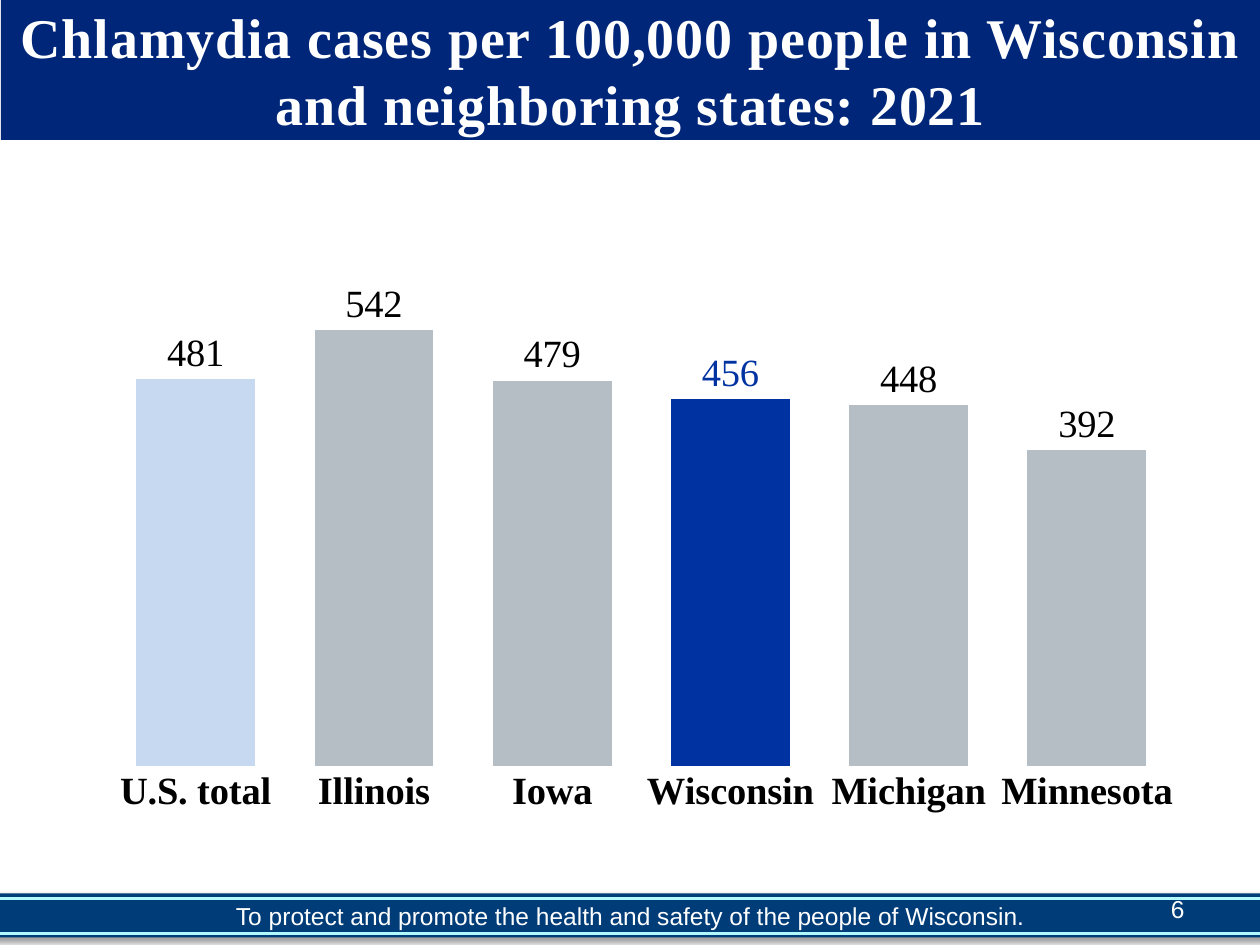
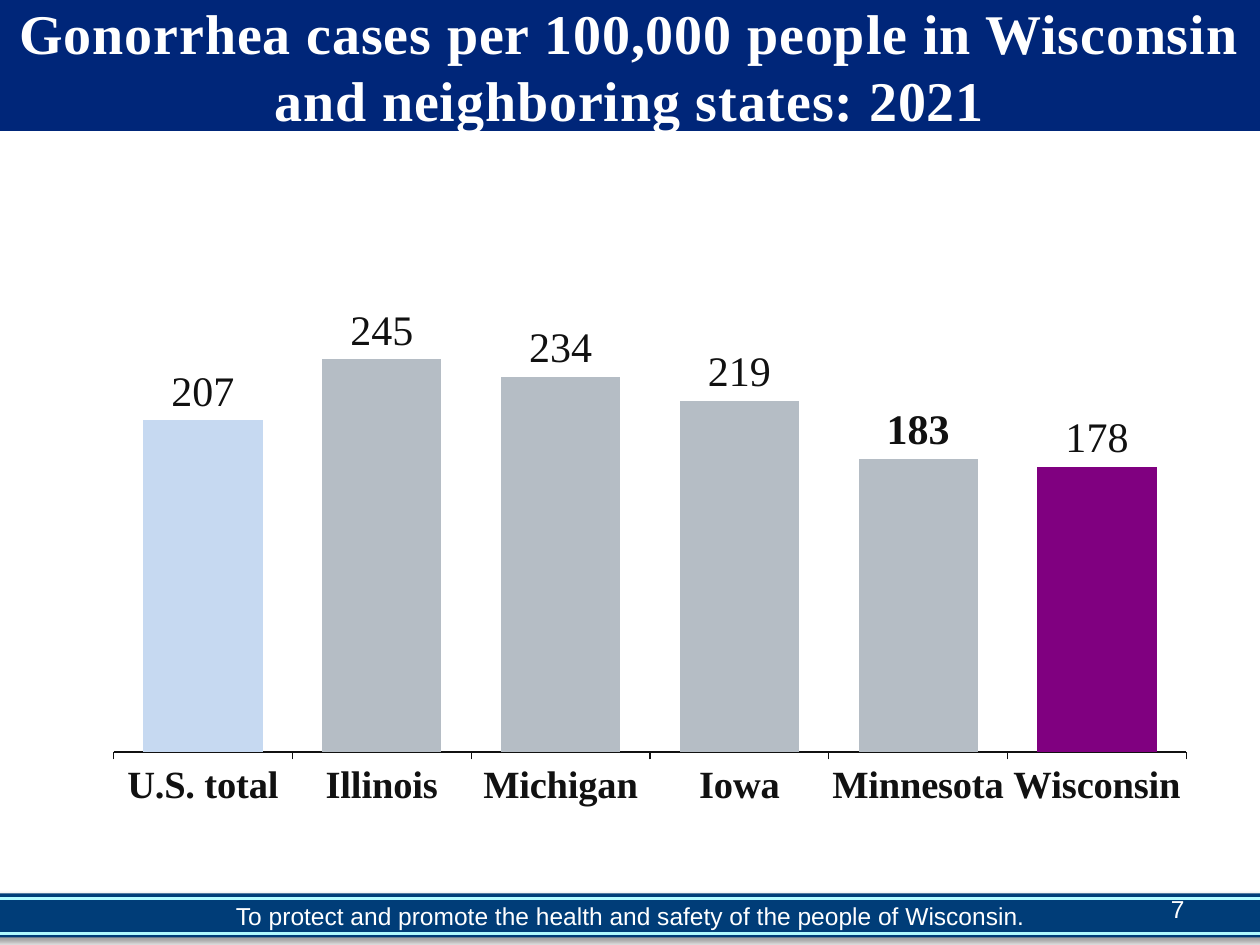
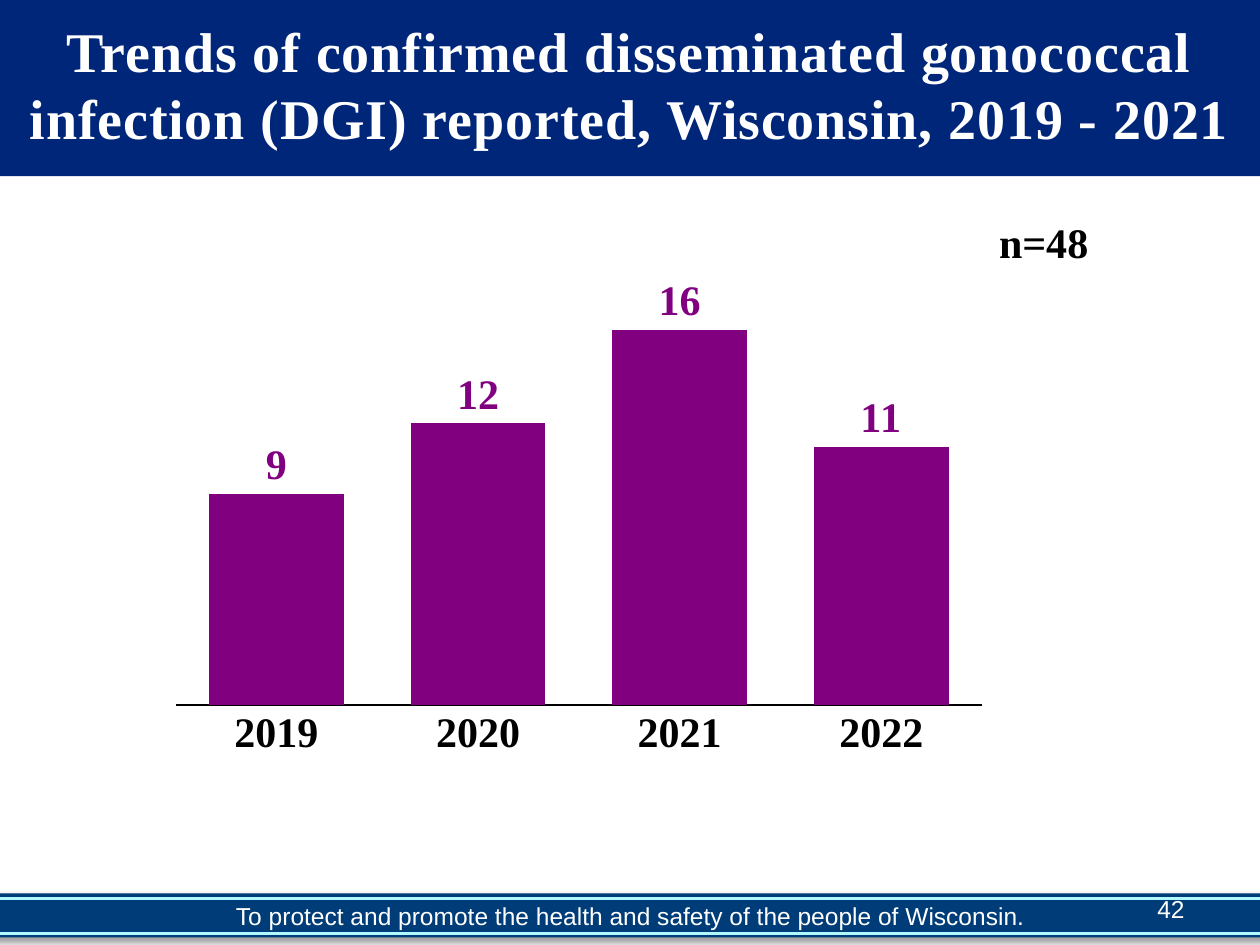
from pptx import Presentation
from pptx.chart.data import CategoryChartData
from pptx.dml.color import RGBColor
from pptx.enum.chart import XL_CHART_TYPE as CT, XL_LABEL_POSITION as LP, XL_TICK_LABEL_POSITION as TLP, XL_TICK_MARK as TM
from pptx.enum.shapes import MSO_CONNECTOR as CONN, MSO_SHAPE as SHAPE
from pptx.enum.text import MSO_ANCHOR as ANCHOR, PP_ALIGN as ALIGN
from pptx.oxml import parse_xml
from pptx.oxml.ns import nsdecls, qn
from pptx.util import Cm, Pt
from lxml import etree

COLORS = {
    "title": "002679", "footer": "003D78", "rule": "B0FAFF",
    "white": "FFFFFF", "black": "000000", "ink": "111111",
    "state": "B5BDC5", "nation": "C6D9F1",
    "chlamydia": "0033A1", "gonorrhea": "800080",
}
SERIF, SANS = "Times New Roman", "Arial"
MOTTO = "To protect and promote the health and safety of the people of Wisconsin."
WIDTH, HEIGHT = 25.4, 19.05


def rgb(name):
    return RGBColor.from_string(COLORS[name])


def set_font(font, name, size, color, bold=False):
    font.name, font.size, font.bold = name, Pt(size), bold
    font.color.rgb = rgb(color)


def paint(fmt, color):
    fmt.fill.solid()
    fmt.fill.fore_color.rgb = rgb(color)


def add_band(slide, box, color):
    sp = slide.shapes.add_shape(SHAPE.RECTANGLE, *map(Cm, box))
    sp.shadow.inherit = False
    paint(sp, color)
    sp.line.fill.background()
    return sp


def write(sp, text, font, align=ALIGN.LEFT, anchor=ANCHOR.MIDDLE):
    """Put one paragraph into a shape; font is (name, size, color, bold)."""
    tf = sp.text_frame
    tf.word_wrap, tf.vertical_anchor = True, anchor
    p = tf.paragraphs[0]
    p.text, p.alignment = text, align
    set_font(p.font, *font)
    return p


def add_text(slide, box, text, font, **layout):
    write(slide.shapes.add_textbox(*map(Cm, box)), text, font, **layout)


def add_rule(slide, y):
    line = slide.shapes.add_connector(CONN.STRAIGHT, Cm(-0.25), Cm(y), Cm(WIDTH + 0.25), Cm(y))
    line.line.color.rgb, line.line.width = rgb("rule"), Pt(1.5)
    etree.SubElement(line._element.spPr, qn("a:effectLst"))


def add_shadow(sp):
    effects = sp._element.spPr.find(qn("a:effectLst"))
    effects.append(parse_xml(
        f'<a:outerShdw {nsdecls("a")} blurRad="{Pt(4)}" dist="{Pt(3)}" dir="2700000">'
        f'<a:srgbClr val="{COLORS["black"]}"><a:alpha val="40000"/></a:srgbClr></a:outerShdw>'))


def add_title(slide, box, text):
    sp = add_band(slide, box, "title")
    p = write(sp, text, (SERIF, 32, "white", True), align=ALIGN.CENTER)
    p.runs[0]._r.get_or_add_rPr().set("spc", "50")


def add_footer(slide, number):
    add_shadow(add_band(slide, (-0.25, 18.01, WIDTH + 0.5, 0.89), "footer"))
    font = (SANS, 14, "white")
    add_text(slide, (-0.2, 18.21, 25.83, 0.51), MOTTO, font, align=ALIGN.CENTER)
    for y in (18.11, 18.82):
        add_rule(slide, y)
    add_text(slide, (18.21, 17.81, 5.92, 1.02), str(number), font, align=ALIGN.RIGHT)


def place_plot(chart, box, plot):
    """Fix the inner plot area; both boxes are in cm on the slide."""
    left, top, width, height = box
    x, y, w, h = plot
    shares = {"x": (x - left) / width, "y": (y - top) / height, "w": w / width, "h": h / height}
    modes = '<c:layoutTarget val="inner"/><c:xMode val="edge"/><c:yMode val="edge"/>'
    values = "".join(f'<c:{key} val="{share:.4f}"/>' for key, share in shares.items())
    area = chart._chartSpace.chart.plotArea
    for old in area.findall(qn("c:layout")):
        area.remove(old)
    area.insert(0, parse_xml(
        f'<c:layout {nsdecls("c")}><c:manualLayout>{modes}{values}</c:manualLayout></c:layout>'))


def add_columns(slide, box, plot, data, top, bar, label, axis, line, tick=TM.NONE, overlap=-30):
    """Draw a column chart; label and axis are fonts, line is (color, width)."""
    cd = CategoryChartData(number_format="0")
    cd.categories = list(data)
    cd.add_series("Series 1", list(data.values()))
    chart = slide.shapes.add_chart(CT.COLUMN_CLUSTERED, *map(Cm, box), cd).chart
    chart.has_legend = chart.has_title = False
    set_font(chart.font, *axis)
    place_plot(chart, box, plot)

    values = chart.value_axis
    values.minimum_scale, values.maximum_scale = 0, top
    values.has_major_gridlines = values.visible = False
    cats = chart.category_axis
    cats.major_tick_mark, cats.minor_tick_mark = tick, TM.NONE
    cats.tick_label_position = TLP.NEXT_TO_AXIS
    set_font(cats.tick_labels.font, *axis)
    cats.format.line.color.rgb, cats.format.line.width = rgb(line[0]), Pt(line[1])

    columns = chart.plots[0]
    columns.gap_width, columns.overlap, columns.vary_by_categories = 50, overlap, False
    series = columns.series[0]
    series.invert_if_negative = False
    paint(series.format, bar)
    labels = series.data_labels
    labels.show_value, labels.position = True, LP.OUTSIDE_END
    set_font(labels.font, *label)
    return series, list(data)


def highlight(series, cats, colors):
    for cat, color in colors.items():
        paint(series.points[cats.index(cat)].format, color)


def restyle_label(series, cats, cat, font):
    label = series.points[cats.index(cat)].data_label
    set_font(label.font, *font)
    label.position = LP.OUTSIDE_END


def new_slide(prs, title_box, title, number):
    slide = prs.slides.add_slide(prs.slide_layouts[6])
    add_footer(slide, number)
    add_title(slide, title_box, title)
    return slide


def add_chlamydia_slide(prs):
    slide = new_slide(prs, (0.02, 0, WIDTH, 2.82),
                      "Chlamydia cases per 100,000 people in Wisconsin and neighboring states: 2021", 6)
    rates = {"U.S. total": 481, "Illinois": 542, "Iowa": 479,
             "Wisconsin": 456, "Michigan": 448, "Minnesota": 392}
    chart = add_columns(slide, (1.07, 4.45, 23.06, 13.36), (2.15, 5.71, 21.56, 9.73), rates, 600,
                        "state", label=(SERIF, 22, "black"), axis=(SERIF, 22, "black", True),
                        line=("white", 0.75))
    highlight(*chart, {"U.S. total": "nation", "Wisconsin": "chlamydia"})
    restyle_label(*chart, "Wisconsin", (SERIF, 22, "chlamydia"))


def add_gonorrhea_slide(prs):
    slide = new_slide(prs, (0, 0, WIDTH, 2.64),
                      "Gonorrhea cases per 100,000 people in Wisconsin and neighboring states: 2021", 7)
    rates = {"U.S. total": 207, "Illinois": 245, "Michigan": 234,
             "Iowa": 219, "Minnesota": 183, "Wisconsin": 178}
    chart = add_columns(slide, (0, 4.78, 24.33, 12.57), (2.29, 5.47, 21.63, 9.69), rates, 300,
                        "state", label=(SERIF, 24, "ink"), axis=(SERIF, 22, "ink", True),
                        line=("ink", 0.75), tick=TM.OUTSIDE)
    highlight(*chart, {"U.S. total": "nation", "Wisconsin": "gonorrhea"})
    restyle_label(*chart, "Minnesota", (SERIF, 24, "ink", True))


def add_dgi_slide(prs):
    slide = new_slide(prs, (0, -0.18, WIDTH, 3.73),
                      "Trends of confirmed disseminated gonococcal infection (DGI) reported, "
                      "Wisconsin, 2019 - 2021", 42)
    cases = {"2019": 9, "2020": 12, "2021": 16, "2022": 11}
    add_columns(slide, (2.97, 4.45, 17.35, 12.07), (3.54, 5.7, 16.26, 8.51), cases, 18,
                "gonorrhea", label=(SERIF, 24, "gonorrhea", True), axis=(SERIF, 24, "black", True),
                line=("black", 1), overlap=-27)
    add_text(slide, (19.89, 4.24, 3.61, 1.27), f"n={sum(cases.values())}",
             (SERIF, 24, "black", True), anchor=ANCHOR.TOP)


def main():
    prs = Presentation()
    prs.slide_width, prs.slide_height = Cm(WIDTH), Cm(HEIGHT)
    add_chlamydia_slide(prs)
    add_gonorrhea_slide(prs)
    add_dgi_slide(prs)
    prs.save("out.pptx")


if __name__ == "__main__":
    main()
